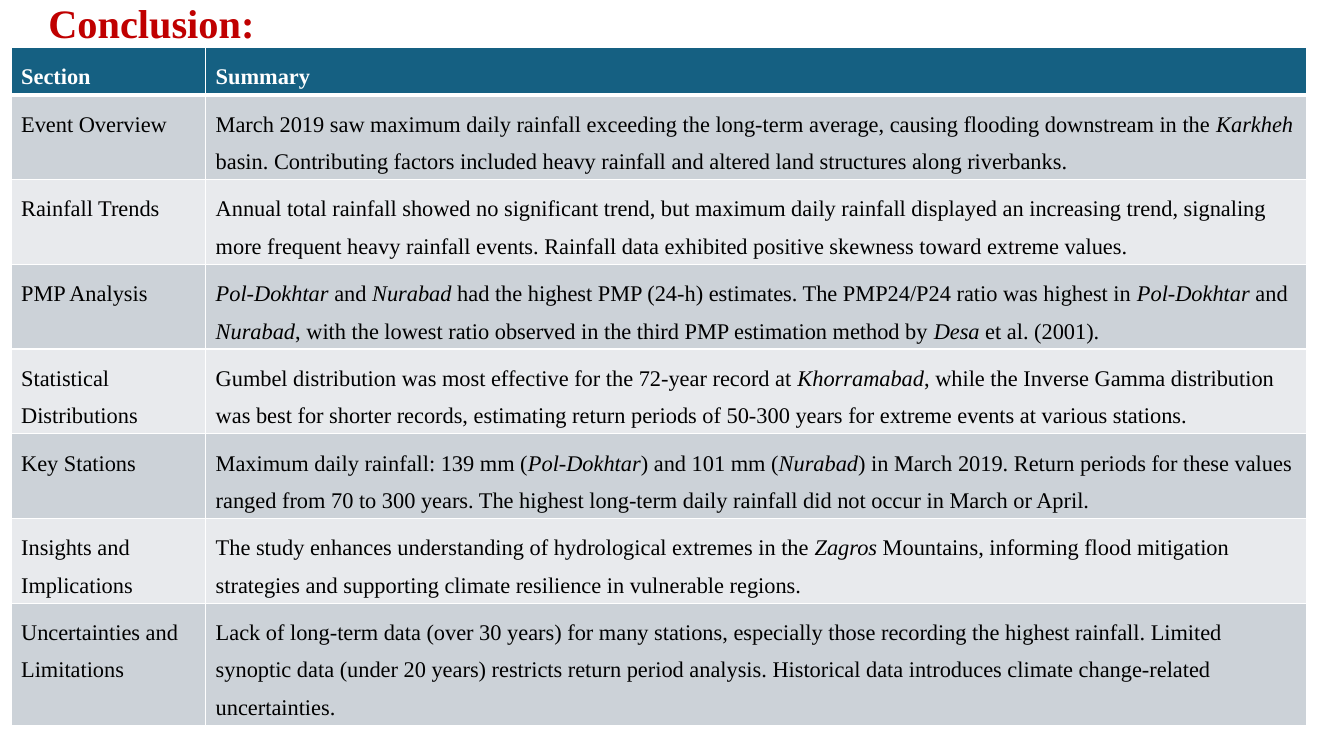
from dataclasses import dataclass

from lxml.etree import SubElement
from pptx import Presentation
from pptx.dml.color import RGBColor
from pptx.enum.text import MSO_ANCHOR, PP_ALIGN
from pptx.oxml.ns import qn
from pptx.slide import Slide
from pptx.table import _Cell
from pptx.util import Inches, Pt

FONT = "Times New Roman"
TITLE_RED = RGBColor(0xC0, 0x00, 0x00)
HEADER_BLUE = RGBColor(0x15, 0x60, 0x82)
BAND_DARK = RGBColor(0xCC, 0xD2, 0xD8)
BAND_LIGHT = RGBColor(0xE8, 0xEA, 0xED)
WHITE = RGBColor(0xFF, 0xFF, 0xFF)
BLACK = RGBColor(0x00, 0x00, 0x00)
ITALIC_MARK = "*"
COLUMN_WIDTHS = (1.93, 10.92)
ROW_HEIGHT = 0.41


@dataclass(frozen=True)
class Finding:
    section: str
    summary: str


HEADER = Finding("Section", "Summary")
FINDINGS = (
    Finding("Event Overview",
            "March 2019 saw maximum daily rainfall exceeding the long-term average, causing flooding "
            "downstream in the *Karkheh* basin. Contributing factors included heavy rainfall and "
            "altered land structures along riverbanks."),
    Finding("Rainfall Trends",
            "Annual total rainfall showed no significant trend, but maximum daily rainfall displayed "
            "an increasing trend, signaling more frequent heavy rainfall events. Rainfall data "
            "exhibited positive skewness toward extreme values."),
    Finding("PMP Analysis",
            "*Pol-Dokhtar* and *Nurabad* had the highest PMP (24-h) estimates. The PMP24/P24 ratio was "
            "highest in *Pol-Dokhtar* and *Nurabad*, with the lowest ratio observed in the third PMP "
            "estimation method by *Desa* et al. (2001)."),
    Finding("Statistical Distributions",
            "Gumbel distribution was most effective for the 72-year record at *Khorramabad*, while the "
            "Inverse Gamma distribution was best for shorter records, estimating return periods of "
            "50-300 years for extreme events at various stations."),
    Finding("Key Stations",
            "Maximum daily rainfall: 139 mm (*Pol-Dokhtar*) and 101 mm (*Nurabad*) in March 2019. "
            "Return periods for these values ranged from 70 to 300 years. The highest long-term daily "
            "rainfall did not occur in March or April."),
    Finding("Insights and Implications",
            "The study enhances understanding of hydrological extremes in the *Zagros* Mountains, "
            "informing flood mitigation strategies and supporting climate resilience in vulnerable "
            "regions."),
    Finding("Uncertainties and Limitations",
            "Lack of long-term data (over 30 years) for many stations, especially those recording the "
            "highest rainfall. Limited synoptic data (under 20 years) restricts return period analysis. "
            "Historical data introduces climate change-related uncertainties."),
)


def add_borders(cell: _Cell, top: float, bottom: float) -> None:
    properties = cell._tc.get_or_add_tcPr()
    for tag, width in (("a:lnL", 1), ("a:lnR", 1), ("a:lnT", top), ("a:lnB", bottom)):
        border = SubElement(properties, qn(tag), w=str(Pt(width)))
        border_fill = SubElement(border, qn("a:solidFill"))
        SubElement(border_fill, qn("a:srgbClr"), val=str(WHITE))


def write_cell(cell: _Cell, marked_text: str, color: RGBColor, bold: bool) -> None:
    paragraph = cell.text_frame.paragraphs[0]
    paragraph.line_spacing = 1.5
    for index, part in enumerate(marked_text.split(ITALIC_MARK)):
        if not part:
            continue
        run = paragraph.add_run()
        run.text = part
        run.font.name = FONT
        run.font.size = Pt(16)
        run.font.bold = bold
        run.font.italic = index % 2 == 1
        run.font.color.rgb = color


def add_title(slide: Slide) -> None:
    title = slide.shapes.title
    title.left, title.top = Inches(0.38), Inches(0)
    title.width, title.height = Inches(6.29), Inches(0.5)
    title.text_frame.text = "Conclusion:"
    title.text_frame.vertical_anchor = MSO_ANCHOR.MIDDLE
    heading = title.text_frame.paragraphs[0]
    heading.alignment = PP_ALIGN.LEFT
    heading.line_spacing = 0.9
    font = heading.runs[0].font
    font.name = FONT
    font.size = Pt(28.8)
    font.bold = True
    font.color.rgb = TITLE_RED


def add_findings(slide: Slide) -> None:
    rows = (HEADER, *FINDINGS)
    table = slide.shapes.add_table(
        len(rows), len(COLUMN_WIDTHS), Inches(0.11), Inches(0.47),
        Inches(sum(COLUMN_WIDTHS)), Inches(ROW_HEIGHT * len(rows))).table
    for column, width in zip(table.columns, COLUMN_WIDTHS):
        column.width = Inches(width)
    for row_index, finding in enumerate(rows):
        table.rows[row_index].height = Inches(ROW_HEIGHT)
        is_header = row_index == 0
        band = HEADER_BLUE if is_header else (BAND_LIGHT, BAND_DARK)[row_index % 2]
        for column_index, content in enumerate((finding.section, finding.summary)):
            cell = table.cell(row_index, column_index)
            add_borders(cell, top=3 if row_index == 1 else 1, bottom=3 if is_header else 1)
            cell.fill.solid()
            cell.fill.fore_color.rgb = band
            write_cell(cell, content, WHITE if is_header else BLACK, is_header)


def main() -> None:
    presentation = Presentation()
    presentation.slide_width = Inches(13.33)
    presentation.slide_height = Inches(7.5)
    slide = presentation.slides.add_slide(presentation.slide_layouts[5])
    add_title(slide)
    add_findings(slide)
    presentation.save("out.pptx")


if __name__ == "__main__":
    main()
